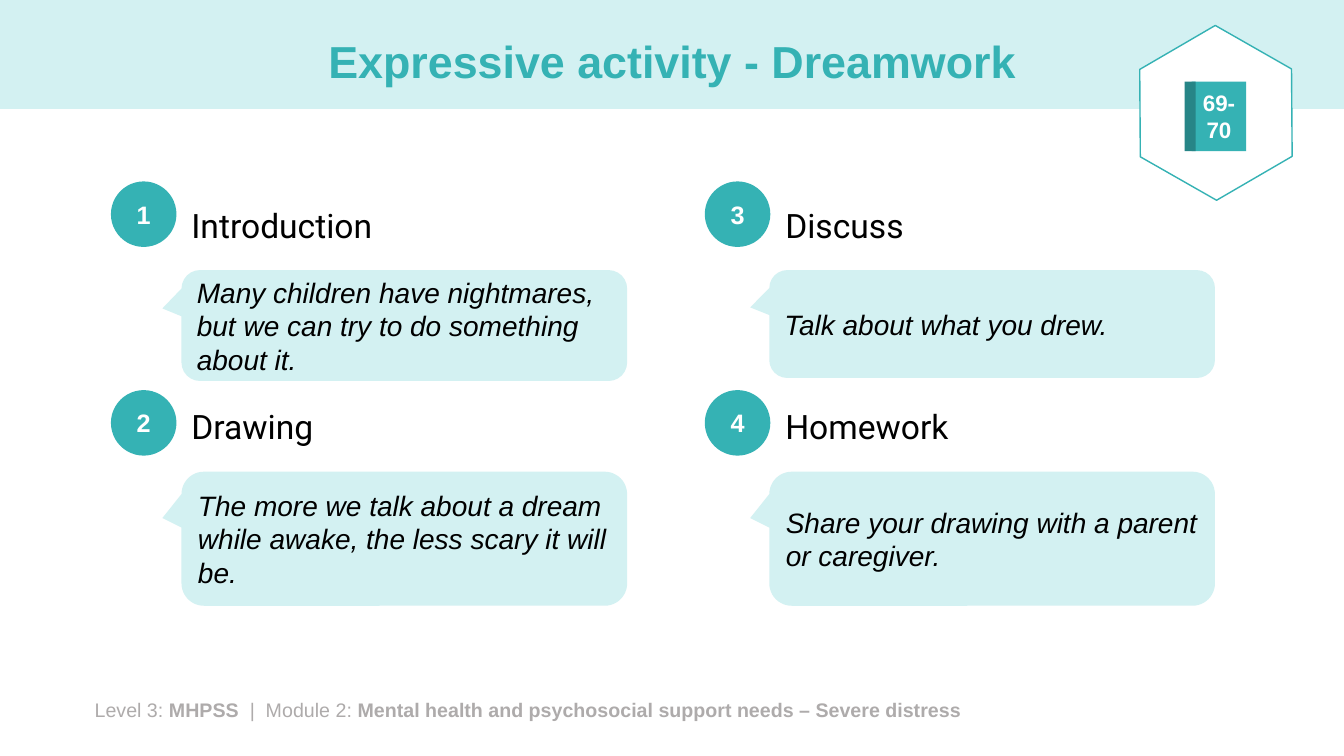
import pptx
import pptx.util
import pptx.dml.color
import pptx.enum.shapes
import pptx.enum.text

Inches = pptx.util.Inches
Shape = pptx.enum.shapes.MSO_SHAPE
Align = pptx.enum.text.PP_ALIGN
Anchor = pptx.enum.text.MSO_ANCHOR

COLORS = {
    "teal": "35B2B4",
    "dark_teal": "278587",
    "pale": "D3F1F2",
    "white": "FFFFFF",
    "black": "000000",
    "grey": "AEABAB",
}


def rgb(name):
    return pptx.dml.color.RGBColor.from_string(COLORS[name])


def write(frame, *parts, size=18, color="black", font="Arial", bold=False,
          italic=False, align=Align.LEFT, anchor=Anchor.MIDDLE, inset=0.05):
    frame.word_wrap = True
    frame.auto_size = pptx.enum.text.MSO_AUTO_SIZE.NONE
    frame.vertical_anchor = anchor
    frame.margin_left = frame.margin_right = Inches(0.1)
    frame.margin_top = frame.margin_bottom = Inches(inset)
    paragraph = frame.paragraphs[0]
    paragraph.alignment = align
    for index, part in enumerate(parts):
        run = paragraph.add_run()
        run.text = part
        run.font.name = font
        run.font.size = pptx.util.Pt(size)
        run.font.bold = bold or index % 2 == 1
        run.font.italic = italic
        run.font.color.rgb = rgb(color)


class ActivitySlide:
    def __init__(self, presentation):
        self.slide = presentation.slides.add_slide(presentation.slide_layouts[5])
        self.shapes = self.slide.shapes

    def shape(self, kind, left, top, width, height, fill, line=None, adjustments=()):
        figure = self.shapes.add_shape(
            kind, Inches(left), Inches(top), Inches(width), Inches(height))
        figure.shadow.inherit = False
        figure.fill.solid()
        figure.fill.fore_color.rgb = rgb(fill)
        if line:
            figure.line.color.rgb = rgb(line)
            figure.line.width = pptx.util.Pt(1)
        else:
            figure.line.fill.background()
        for index, value in enumerate(adjustments):
            figure.adjustments[index] = value
        return figure

    def text(self, left, top, width, height, *parts, **style):
        box = self.shapes.add_textbox(
            Inches(left), Inches(top), Inches(width), Inches(height))
        write(box.text_frame, *parts, **style)

    def title(self, words):
        heading = self.shapes.title
        heading.left, heading.top = Inches(0.92), Inches(0.13)
        heading.width, heading.height = Inches(11.5), Inches(0.95)
        write(heading.text_frame, words, size=32, color="teal", bold=True,
              align=Align.CENTER)
        heading.element.getparent().append(heading.element)

    def badge(self, left, top, number):
        circle = self.shape(Shape.OVAL, left, top, 0.65, 0.65, "teal")
        write(circle.text_frame, number, color="white", bold=True, align=Align.CENTER)

    def callout(self, left, top, height, words):
        bubble = self.shape(Shape.ROUNDED_RECTANGULAR_CALLOUT, left, top, 4.42, height,
                            "pale", adjustments=(-0.543, -0.154, 0.167))
        write(bubble.text_frame, words, size=20, italic=True)

    def page_reference(self, pages):
        hexagon = self.shape(Shape.HEXAGON, 11.19, 0.37, 1.74, 1.5, "white", "teal",
                             (0.29, 1.155))
        hexagon.rotation = 29.7
        cover = self.shape(Shape.RECTANGLE, 11.82, 0.81, 0.54, 0.69, "teal")
        write(cover.text_frame, pages, size=16, color="white", bold=True,
              align=Align.CENTER)
        self.shape(Shape.RECTANGLE, 11.75, 0.81, 0.11, 0.69, "dark_teal")


def main():
    presentation = pptx.Presentation()
    presentation.slide_width = Inches(13.33)
    presentation.slide_height = Inches(7.5)
    activity = ActivitySlide(presentation)

    activity.shape(Shape.RECTANGLE, 0, 0, 13.33, 1.08, "pale")
    activity.title("Expressive activity - Dreamwork")
    activity.text(0.84, 6.87, 11.35, 0.34, "Level 3: ", "MHPSS ", " |  Module 2: ",
                  "Mental health and psychosocial support needs – Severe distress",
                  size=14, color="grey", anchor=Anchor.TOP)
    activity.page_reference("69-70")

    steps = [
        ("Introduction", 1.1,
         "Many children have nightmares, but we can try to do something about it."),
        ("Drawing", 1.33,
         "The more we talk about a dream while awake, the less scary it will be."),
        ("Discuss", 1.07, "Talk about what you drew."),
        ("Homework", 1.33, "Share your drawing with a parent or caregiver."),
    ]
    for index, (step, height, message) in enumerate(steps):
        column, row = divmod(index, 2)
        activity.text(1.8 + 5.89 * column, 1.93 + 2 * row, 4.54, 0.6, step,
                      size=24, font="Roboto", anchor=Anchor.TOP, inset=0.1)
        activity.callout(1.8 + 5.83 * column, 2.68 + 2 * row, height, message)
        activity.badge(1.1 + 5.89 * column, 1.8 + 2.07 * row, str(index + 1))

    presentation.save("out.pptx")


if __name__ == "__main__":
    main()
